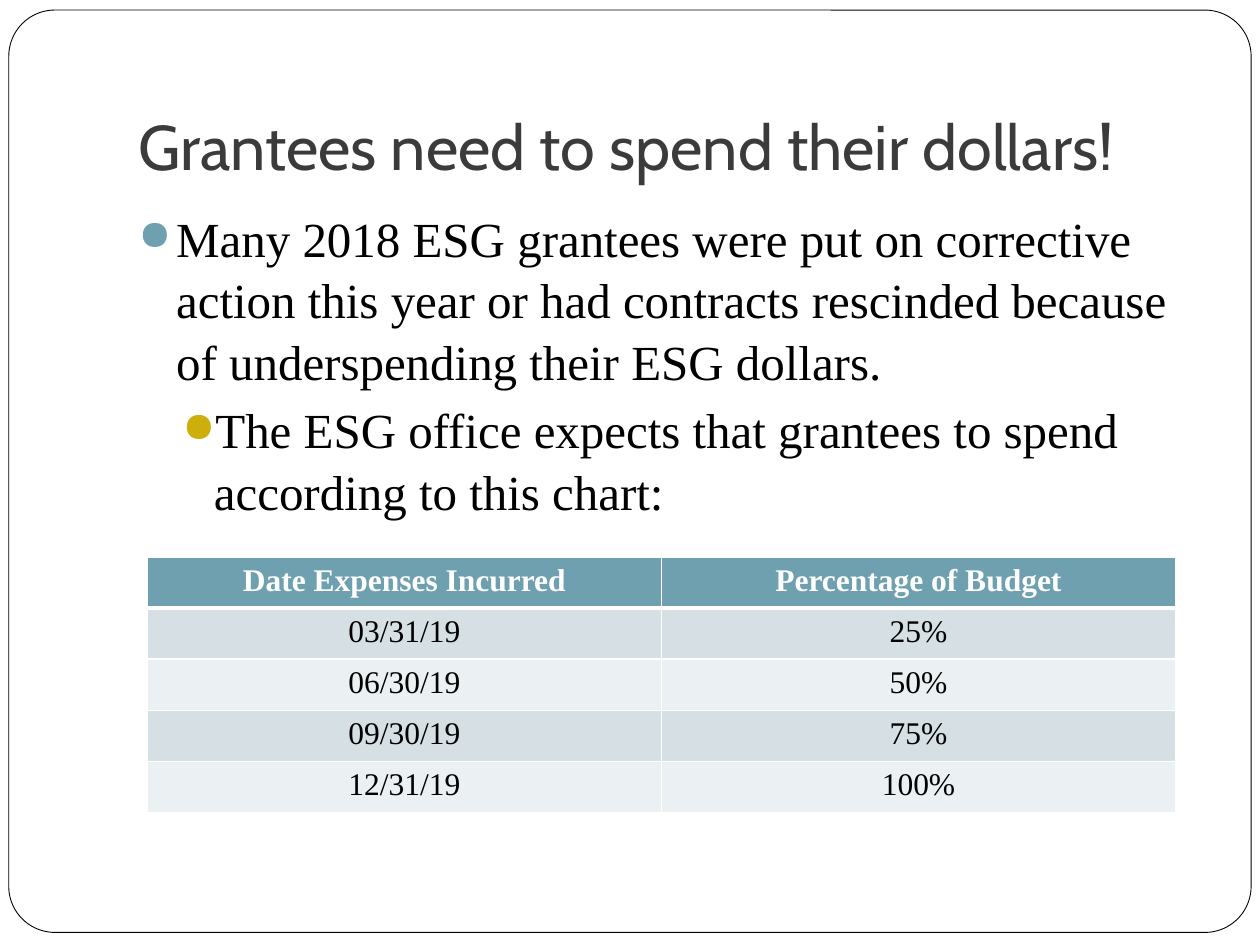
from lxml.etree import SubElement
from pptx import Presentation
from pptx.dml.color import RGBColor
from pptx.enum.shapes import MSO_SHAPE
from pptx.enum.text import MSO_ANCHOR, PP_ALIGN
from pptx.oxml.ns import qn
from pptx.util import Inches, Pt


def color(value):
    return RGBColor.from_string(value)


def format_font(paragraph, name, size, value, bold=False):
    for run in paragraph.runs:
        run.font.name = name
        run.font.size = Pt(size)
        run.font.bold = bold
        run.font.color.rgb = color(value)


SERIF = "Times New Roman"
presentation = Presentation()
presentation.slide_width = Inches(10)
presentation.slide_height = Inches(7.5)
slide = presentation.slides.add_slide(presentation.slide_layouts[5])

frame = slide.shapes.add_shape(
    MSO_SHAPE.ROUNDED_RECTANGLE, Inches(0.07), Inches(0.08), Inches(9.86), Inches(7.32)
)
frame.adjustments[0] = 0.05
frame.shadow.inherit = False
frame.fill.solid()
frame.fill.fore_color.rgb = color("FFFFFF")
frame.line.color.rgb = color("000000")
frame.line.width = Pt(0.5)
slide.shapes._spTree.insert(2, frame._element)

title = slide.shapes.title
title.left, title.top = Inches(1), Inches(0.3)
title.width, title.height = Inches(8.5), Inches(1.25)
title.text_frame.text = "Grantees need to spend their dollars!"
title.text_frame.vertical_anchor = MSO_ANCHOR.BOTTOM
title.text_frame.margin_bottom = Inches(0.1)
title.text_frame.paragraphs[0].alignment = PP_ALIGN.LEFT
format_font(title.text_frame.paragraphs[0], "Cabin", 36, "3B3B3B")

body = slide.shapes.add_textbox(Inches(1), Inches(1.58), Inches(8.5), Inches(5))
body.text_frame.word_wrap = True
bullets = [
    ("Many 2018 ESG grantees were put on corrective action this year or had contracts "
     "rescinded because of underspending their ESG dollars.", 0.3, 0.3, 5.8, "6EA0B0"),
    ("The ESG office expects that grantees to spend according to this chart:",
     0.6, 0.25, 3.7, "CCAF0A"),
]
body.text_frame.text = "\n".join(bullet[0] for bullet in bullets)
for level, paragraph in enumerate(body.text_frame.paragraphs):
    text, margin, hanging, space_before, bullet_color = bullets[level]
    paragraph.level = level
    paragraph.space_before = Pt(space_before)
    paragraph.line_spacing = 1.05
    format_font(paragraph, SERIF, 28, "000000")
    properties = paragraph._p.get_or_add_pPr()
    properties.set("marL", str(Inches(margin)))
    properties.set("indent", str(-Inches(hanging)))
    bullet_fill = SubElement(properties, qn("a:buClr"))
    SubElement(bullet_fill, qn("a:srgbClr"), val=bullet_color)
    SubElement(properties, qn("a:buSzPct"), val="85000")
    SubElement(properties, qn("a:buChar"), char="●")

rows = [
    ("Date Expenses Incurred", "Percentage of Budget"),
    ("03/31/19", "25%"),
    ("06/30/19", "50%"),
    ("09/30/19", "75%"),
    ("12/31/19", "100%"),
]
table = slide.shapes.add_table(
    len(rows), 2, Inches(1.17), Inches(4.42), Inches(8.16), Inches(2.03)
).table
for row_index, row in enumerate(rows):
    header = row_index == 0
    fill = "6EA0B0" if header else ("EBF0F2", "D5DFE4")[row_index % 2]
    for column_index, text in enumerate(row):
        cell = table.cell(row_index, column_index)
        cell.text_frame.text = text
        paragraph = cell.text_frame.paragraphs[0]
        paragraph.alignment = PP_ALIGN.CENTER
        format_font(paragraph, SERIF, 18, "FFFFFF" if header else "000000", header)
        properties = cell._tc.get_or_add_tcPr()
        for side in ("lnL", "lnR", "lnT", "lnB"):
            thick = (row_index, side) in ((0, "lnB"), (1, "lnT"))
            border = SubElement(properties, qn(f"a:{side}"), w=str(Pt(3 if thick else 1)))
            border_fill = SubElement(border, qn("a:solidFill"))
            SubElement(border_fill, qn("a:srgbClr"), val="FFFFFF")
        cell.fill.solid()
        cell.fill.fore_color.rgb = color(fill)

presentation.save("out.pptx")
